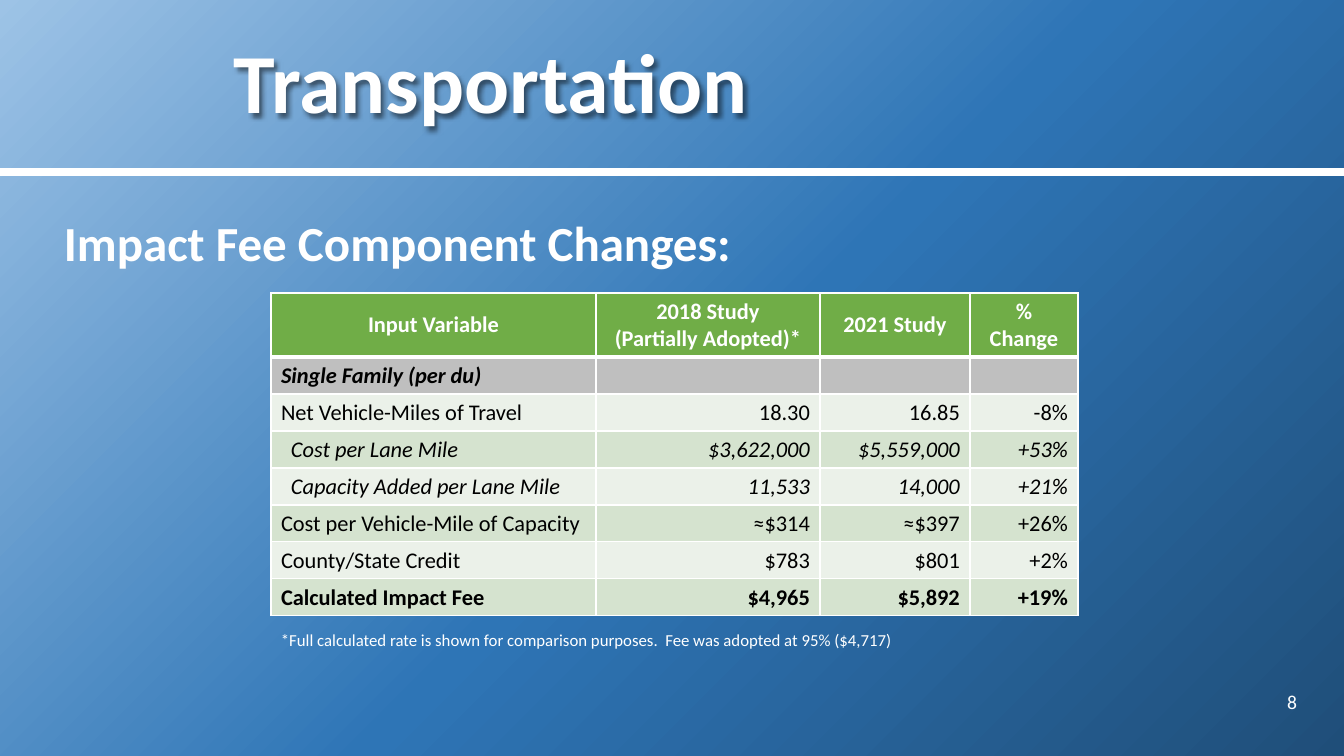
import pptx
import pptx.dml.color
import pptx.enum.shapes
import pptx.enum.text
import pptx.oxml
import pptx.oxml.ns
import pptx.util
from lxml import etree

RGB = pptx.dml.color.RGBColor
ALIGN = pptx.enum.text.PP_ALIGN
ANCHOR = pptx.enum.text.MSO_ANCHOR
qn = pptx.oxml.ns.qn

WHITE = RGB(0xFF, 0xFF, 0xFF)
BLACK = RGB(0, 0, 0)
GREEN = RGB(0x70, 0xAD, 0x47)
GRAY = RGB(0xBF, 0xBF, 0xBF)
PALE_GREEN = RGB(0xEB, 0xF1, 0xE9)
SOFT_GREEN = RGB(0xD5, 0xE3, 0xCF)
SKY = RGB(0x9D, 0xC3, 0xE6)
BLUE = RGB(0x2E, 0x75, 0xB6)
NAVY = RGB(0x1F, 0x4E, 0x79)

FONT = "Calibri"
PX_PER_INCH = 100.8
WIDTH, HEIGHT = 1344, 756
NS = pptx.oxml.ns.nsdecls("a", "p")

COLUMNS = (325, 224, 150, 108)
HEADER_HEIGHT, ROW_HEIGHT = 64, 37
HEADERS = ("Input Variable", "2018 Study\n(Partially Adopted)*", "2021 Study", "% Change")
# Each row: style, then its cells
ROWS = (
    ("group", "Single Family (per du)", "", "", ""),
    ("plain", "Net Vehicle-Miles of Travel", "18.30", "16.85", "-8%"),
    ("detail", "Cost per Lane Mile", "$3,622,000", "$5,559,000", "+53%"),
    ("detail", "Capacity Added per Lane Mile", "11,533", "14,000", "+21%"),
    ("plain", "Cost per Vehicle-Mile of Capacity", "≈$314", "≈$397", "+26%"),
    ("plain", "County/State Credit", "$783", "$801", "+2%"),
    ("total", "Calculated Impact Fee", "$4,965", "$5,892", "+19%"),
)


def px(n):
    return pptx.util.Emu(round(n * 914400 / PX_PER_INCH))


def add_run(p, text, size, color, bold=False, italic=False):
    r = p.add_run()
    r.text = text
    r.font.name = FONT
    r.font.size = pptx.util.Pt(size)
    r.font.color.rgb = color
    r.font.bold = bold
    r.font.italic = italic


def add_text(slide, box, text, size, bold=False, align=ALIGN.LEFT,
             anchor=ANCHOR.TOP, spacing=1.0):
    sp = slide.shapes.add_textbox(*map(px, box))
    tf = sp.text_frame
    tf.word_wrap = True
    tf.vertical_anchor = anchor
    p = tf.paragraphs[0]
    p.alignment = align
    p.line_spacing = spacing
    add_run(p, text, size, WHITE, bold)
    return sp


def set_background(slide):
    stops = "".join(
        f'<a:gs pos="{pos}000"><a:srgbClr val="{color}"/></a:gs>'
        for pos, color in ((0, SKY), (53, BLUE), (100, NAVY)))
    bg = pptx.oxml.parse_xml(
        f'<p:bg {NS}><p:bgPr><a:gradFill rotWithShape="1"><a:gsLst>{stops}</a:gsLst>'
        '<a:path path="circle"><a:fillToRect r="100000" b="100000"/></a:path>'
        '</a:gradFill><a:effectLst/></p:bgPr></p:bg>')
    slide.shapes.element.getparent().insert(0, bg)


def add_title_band(slide, box):
    left, top, width, height = box
    line = slide.shapes.add_connector(
        pptx.enum.shapes.MSO_CONNECTOR.STRAIGHT,
        px(left), px(top + height), px(left + width), px(top + height))
    line.line.color.rgb = WHITE
    line.line.width = pptx.util.Pt(6)
    etree.SubElement(line.element.spPr, qn("a:effectLst"))

    title = add_text(slide, (left + 224, top, 1083, height), "Transportation", 60,
                     bold=True, anchor=ANCHOR.MIDDLE, spacing=0.9)
    title.element.spPr.append(pptx.oxml.parse_xml(
        f'<a:effectLst {NS}><a:outerShdw blurRad="38100" dist="38100" dir="2700000">'
        '<a:srgbClr val="000000"><a:alpha val="50000"/></a:srgbClr>'
        '</a:outerShdw></a:effectLst>'))


def set_cell(cell, text, fill, color, align, bold=False, italic=False, bottom=1, top=1):
    tc_pr = cell._tc.get_or_add_tcPr()
    for side, width in (("L", 1), ("R", 1), ("T", top), ("B", bottom)):
        tc_pr.append(pptx.oxml.parse_xml(
            f'<a:ln{side} {NS} w="{width * 12700}"><a:solidFill>'
            f'<a:srgbClr val="{WHITE}"/></a:solidFill></a:ln{side}>'))
    cell.fill.solid()
    cell.fill.fore_color.rgb = fill
    cell.vertical_anchor = ANCHOR.MIDDLE
    tf = cell.text_frame
    for i, line in enumerate(text.split("\n")):
        p = tf.add_paragraph() if i else tf.paragraphs[0]
        p.alignment = align
        if line:
            add_run(p, line, 16, color, bold, italic)
        else:
            etree.SubElement(p._p, qn("a:endParaRPr")).set("sz", "1600")


def add_fee_table(slide, box):
    frame = slide.shapes.add_table(len(ROWS) + 1, len(COLUMNS), *map(px, box))
    table = frame.table
    for column, width in zip(table.columns, COLUMNS):
        column.width = px(width)
    for i, row in enumerate(table.rows):
        row.height = px(ROW_HEIGHT if i else HEADER_HEIGHT)

    for c, text in enumerate(HEADERS):
        set_cell(table.cell(0, c), text, GREEN, WHITE, ALIGN.CENTER, bold=True, bottom=3)
    for r, (style, *texts) in enumerate(ROWS, 1):
        band = SOFT_GREEN if r % 2 else PALE_GREEN
        for c, text in enumerate(texts):
            cell = table.cell(r, c)
            set_cell(cell, text, GRAY if style == "group" else band, BLACK,
                     ALIGN.RIGHT if c else ALIGN.LEFT,
                     bold=style in ("group", "total"),
                     italic=style in ("group", "detail"),
                     top=3 if r == 1 else 1)
            if style == "detail" and c == 0:
                cell.margin_left = px(20)


def add_body(slide, box):
    left, top, width, height = box
    add_text(slide, box, "Impact Fee Component Changes:", 35, bold=True, spacing=1.2)
    table_left, table_top = left + 217, top + 97
    table_height = HEADER_HEIGHT + ROW_HEIGHT * len(ROWS)
    add_fee_table(slide, (table_left, table_top, sum(COLUMNS), table_height))
    add_text(slide, (table_left, top + 429, 711, 30),
             "*Full calculated rate is shown for comparison purposes.  "
             "Fee was adopted at 95% ($4,717)", 12)


def main():
    prs = pptx.Presentation()
    prs.slide_width, prs.slide_height = px(WIDTH), px(HEIGHT)
    slide = prs.slides.add_slide(prs.slide_layouts[6])
    set_background(slide)
    add_title_band(slide, (0, 0, WIDTH, 172))
    add_body(slide, (54, 196, 1252, 531))
    add_text(slide, (1218, 682, 89, 40), "8", 14, align=ALIGN.RIGHT, anchor=ANCHOR.MIDDLE)
    prs.save("out.pptx")


if __name__ == "__main__":
    main()
